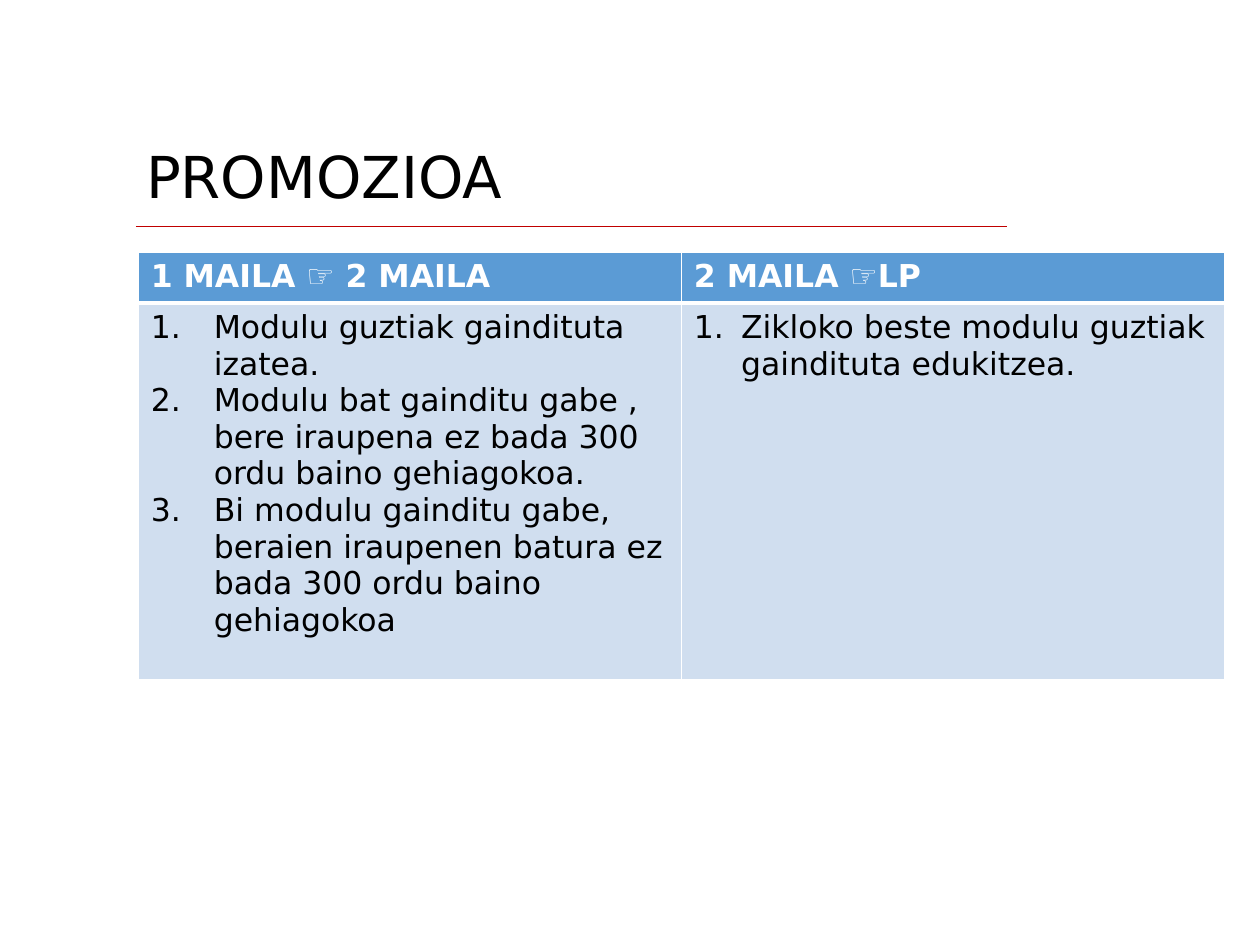
"""Builds the PROMOZIOA slide with its two-column table of promotion conditions."""
import lxml.etree
import pptx
import pptx.dml.color
import pptx.enum.shapes
import pptx.enum.text
import pptx.oxml.ns
import pptx.util

Cm, Pt = pptx.util.Cm, pptx.util.Pt
qn = pptx.oxml.ns.qn

TITLE = "PROMOZIOA"
COLUMNS = [
    {
        "header": "1 MAILA ☞ 2 MAILA",
        "indent": Cm(1.27),
        "conditions": [
            "Modulu guztiak gaindituta izatea.",
            "Modulu bat gainditu gabe , bere iraupena ez bada 300 ordu baino gehiagokoa.",
            "Bi modulu gainditu gabe, beraien iraupenen batura ez bada 300 ordu baino gehiagokoa",
        ],
    },
    {
        "header": "2 MAILA ☞LP",
        "indent": Cm(0.95),
        "conditions": ["Zikloko beste modulu guztiak gaindituta edukitzea."],
    },
]
FONT = "DejaVu Sans"
BLACK, WHITE, RED = "000000", "FFFFFF", "C00000"
HEADER_FILL, BODY_FILL = "5B9BD5", "D0DEEF"
COLUMN_WIDTH = Cm(10.95)
ROW_HEIGHTS = [Cm(1.03), Cm(7.6)]
THIN, THICK = Pt(1), Pt(3)


def color(hex_string):
    return pptx.dml.color.RGBColor.from_string(hex_string)


def format_paragraph(paragraph, size, hex_string, bold=False):
    for run in paragraph.runs:
        run.font.name = FONT
        run.font.size = Pt(size)
        run.font.bold = bold
        run.font.color.rgb = color(hex_string)


def number_paragraph(paragraph, indent):
    properties = paragraph._p.get_or_add_pPr()
    properties.set("marL", str(indent))
    properties.set("indent", str(-indent))
    lxml.etree.SubElement(properties, qn("a:buFont"), typeface="+mj-lt")
    lxml.etree.SubElement(properties, qn("a:buAutoNum"), type="arabicPeriod")


def set_borders(cell, top, bottom):
    properties = cell._tc.get_or_add_tcPr()
    widths = {"a:lnL": THIN, "a:lnR": THIN, "a:lnT": top, "a:lnB": bottom}
    for position, (tag, width) in enumerate(widths.items()):
        border = lxml.etree.Element(qn(tag), w=str(width))
        fill = lxml.etree.SubElement(border, qn("a:solidFill"))
        lxml.etree.SubElement(fill, qn("a:srgbClr"), val=WHITE)
        properties.insert(position, border)


def fill_cell(cell, lines, fill, text_color, bold, indent=None):
    cell.fill.solid()
    cell.fill.fore_color.rgb = color(fill)
    cell.margin_left = cell.margin_right = Cm(0.25)
    cell.margin_top = cell.margin_bottom = Cm(0.13)
    cell.text_frame.text = "\n".join(lines)
    for paragraph in cell.text_frame.paragraphs:
        if indent:
            number_paragraph(paragraph, indent)
        format_paragraph(paragraph, 18, text_color, bold)


def add_rule(slide):
    rule = slide.shapes.add_connector(
        pptx.enum.shapes.MSO_CONNECTOR.STRAIGHT, Cm(2.74), Cm(4.57), Cm(20.3), Cm(4.57))
    rule.line.color.rgb = color(RED)
    rule.line.width = Pt(0.75)
    lxml.etree.SubElement(rule._element.spPr, qn("a:effectLst"))


def format_title(title):
    title.left, title.top, title.width, title.height = Cm(2.69), Cm(2.69), Cm(21.9), Cm(1.7)
    text_frame = title.text_frame
    text_frame.text = TITLE
    text_frame.vertical_anchor = pptx.enum.text.MSO_ANCHOR.MIDDLE
    paragraph = text_frame.paragraphs[0]
    paragraph.alignment = pptx.enum.text.PP_ALIGN.LEFT
    format_paragraph(paragraph, 33, BLACK)


def add_conditions_table(slide):
    table = slide.shapes.add_table(
        len(ROW_HEIGHTS), len(COLUMNS), Cm(2.79), Cm(5.08),
        COLUMN_WIDTH * len(COLUMNS), sum(ROW_HEIGHTS)).table
    for row, height in zip(table.rows, ROW_HEIGHTS):
        row.height = height
    for index, column in enumerate(COLUMNS):
        table.columns[index].width = COLUMN_WIDTH
        header, body = table.cell(0, index), table.cell(1, index)
        fill_cell(header, [column["header"]], HEADER_FILL, WHITE, True)
        fill_cell(body, column["conditions"], BODY_FILL, BLACK, False, column["indent"])
        set_borders(header, THIN, THICK)
        set_borders(body, THICK, THIN)


def main():
    presentation = pptx.Presentation()
    presentation.slide_width, presentation.slide_height = Cm(25.4), Cm(19.05)
    slide = presentation.slides.add_slide(presentation.slide_layouts[5])
    add_rule(slide)
    format_title(slide.shapes.title)
    add_conditions_table(slide)
    presentation.save("out.pptx")


if __name__ == "__main__":
    main()
